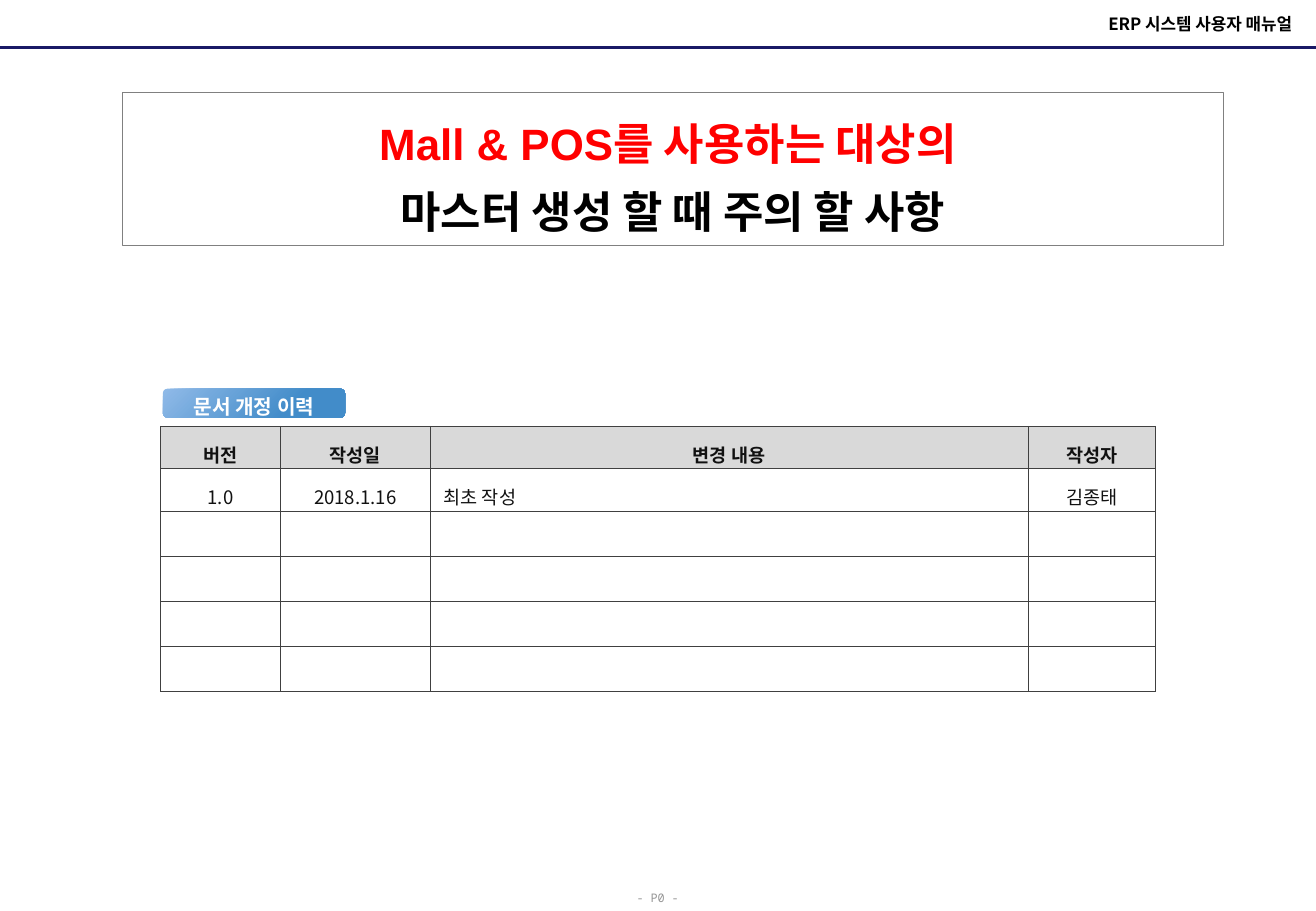
from lxml.etree import SubElement
from pptx import Presentation
from pptx.dml.color import RGBColor
from pptx.enum.shapes import MSO_CONNECTOR, MSO_SHAPE
from pptx.enum.text import MSO_ANCHOR, PP_ALIGN
from pptx.oxml import parse_xml
from pptx.oxml.ns import nsdecls, qn
from pptx.util import Inches, Pt

KOREAN = "Noto Sans CJK KR"


def rgb(color):
    return RGBColor.from_string(color)


def style(paragraph, size, color, bold=False, font=KOREAN, align=PP_ALIGN.CENTER, spacing=1.3):
    """Format a paragraph and its runs, for Latin and Korean letters alike."""
    paragraph.alignment = align
    paragraph.line_spacing = spacing
    for run in paragraph.runs:
        run.font.size = Pt(size)
        run.font.bold = bold
        run.font.name = font
        run.font.color.rgb = rgb(color)
        SubElement(run.font._element, qn("a:ea"), typeface=KOREAN)


prs = Presentation()
prs.slide_width, prs.slide_height = Inches(10.83), Inches(7.5)
slide = prs.slides.add_slide(prs.slide_layouts[6])
shapes = slide.shapes

# Page number and header
page_number = shapes.add_textbox(Inches(5.14), Inches(7.25), Inches(0.56), Inches(0.25)).text_frame
page_number.text = "- P0 -"
style(page_number.paragraphs[0], 7, "969696", font="Noto Sans Mono", align=PP_ALIGN.LEFT)

header_rule = shapes.add_connector(
    MSO_CONNECTOR.STRAIGHT, Inches(0), Inches(0.39), Inches(10.83), Inches(0.39))
header_rule.line.color.rgb = rgb("191966")
header_rule.line.width = Pt(1.5)
SubElement(header_rule._element.spPr, qn("a:effectLst"))

header = shapes.add_textbox(Inches(6.04), Inches(0.06), Inches(4.69), Inches(0.27)).text_frame
header.word_wrap = True
header.vertical_anchor = MSO_ANCHOR.MIDDLE
header.text = "ERP 시스템 사용자 매뉴얼"
style(header.paragraphs[0], 10, "000000", bold=True, align=PP_ALIGN.RIGHT, spacing=1.0)

# Revision history table
column_widths = [0.99, 1.23, 4.92, 1.05]
row_heights = [0.35, 0.35, 0.37, 0.37, 0.37, 0.37]
revisions = [
    ["버전", "작성일", "변경 내용", "작성자"],
    ["1.0", "2018.1.16", "최초 작성", "김종태"],
]
history = shapes.add_table(
    len(row_heights), len(column_widths), Inches(1.32), Inches(3.51),
    Inches(sum(column_widths)), Inches(sum(row_heights))).table
history.first_row = False
history.horz_banding = False
for column, width in zip(history.columns, column_widths):
    column.width = Inches(width)
for r, height in enumerate(row_heights):
    history.rows[r].height = Inches(height)
    for c in range(len(column_widths)):
        cell = history.cell(r, c)
        cell.vertical_anchor = MSO_ANCHOR.MIDDLE
        cell.margin_left = cell.margin_right = Inches(0.11)
        for side in ("lnL", "lnR", "lnT", "lnB"):
            cell._tc.get_or_add_tcPr().append(parse_xml(
                f'<a:{side} {nsdecls("a")} w="6350"><a:solidFill>'
                f'<a:srgbClr val="404040"/></a:solidFill></a:{side}>'))
        if r == 0:
            cell.fill.solid()
            cell.fill.fore_color.rgb = rgb("D9D9D9")
        else:
            cell.fill.background()
        if r < len(revisions):
            cell.margin_top = cell.margin_bottom = Inches(0.05)
            cell.text_frame.text = revisions[r][c]
            left_aligned = r > 0 and c == 2
            style(cell.text_frame.paragraphs[0], 11, "111111", bold=r == 0,
                  align=PP_ALIGN.LEFT if left_aligned else PP_ALIGN.CENTER)
        else:
            cell.margin_top = cell.margin_bottom = 0

# Label above the table
history_label = shapes.add_shape(
    MSO_SHAPE.ROUNDED_RECTANGLE, Inches(1.34), Inches(3.2), Inches(1.5), Inches(0.24))
history_label.shadow.inherit = False
history_label.line.fill.background()
history_label.fill.gradient()
history_label.fill.gradient_angle = 315
for stop, (position, color) in zip(
        history_label.fill.gradient_stops, [(0, "90BAE8"), (0.7, "428CC9")]):
    stop.position = position
    stop.color.rgb = rgb(color)
label_text = history_label.text_frame
label_text.margin_left = label_text.margin_right = label_text.margin_top = 0
label_text.margin_bottom = Inches(0.04)
label_text.vertical_anchor = MSO_ANCHOR.MIDDLE
label_text.text = "문서 개정 이력"
style(label_text.paragraphs[0], 12, "FFFFFF", bold=True, spacing=1.5)

# Title box
title_box = shapes.add_shape(
    MSO_SHAPE.RECTANGLE, Inches(1.01), Inches(0.76), Inches(9.06), Inches(1.26))
title_box.shadow.inherit = False
title_box.fill.background()
title_box.line.color.rgb = rgb("808080")
title_box.line.width = Pt(0.75)
title = title_box.text_frame
title.vertical_anchor = MSO_ANCHOR.MIDDLE
title.text = "Mall & POS를 사용하는 대상의 \n마스터 생성 할 때 주의 할 사항"
for line, color in zip(title.paragraphs, ["FF0000", "000000"]):
    style(line, 26, color, bold=True, font="Arial")

prs.save("out.pptx")
